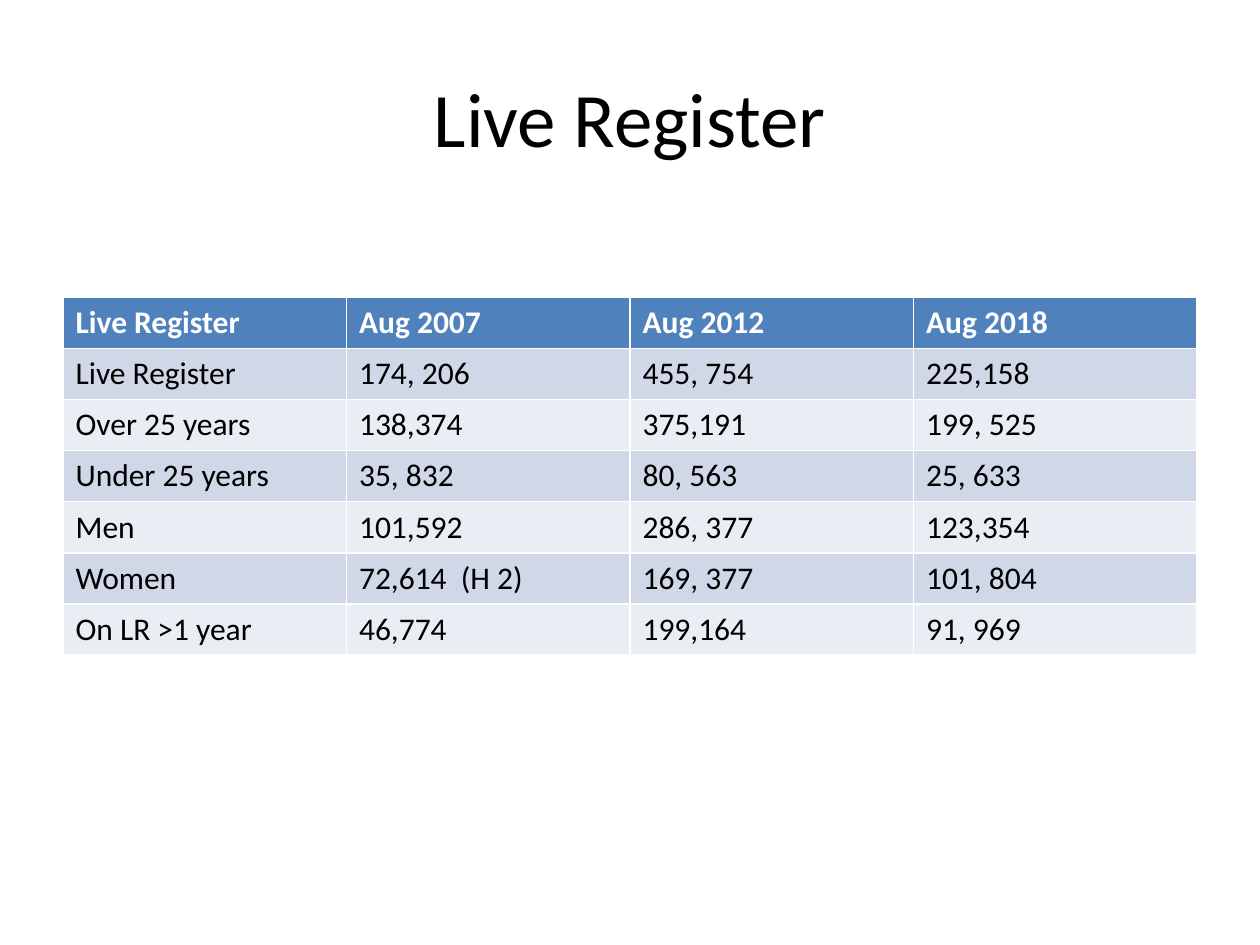
from pptx import Presentation
from pptx.dml.color import RGBColor
from pptx.enum import text
from pptx.util import Inches, Pt

FONT = "Calibri"
BLACK = RGBColor(0x00, 0x00, 0x00)
WHITE = RGBColor(0xFF, 0xFF, 0xFF)
HEADER_BLUE = RGBColor(0x4F, 0x81, 0xBD)
BAND_DARK = RGBColor(0xD0, 0xD8, 0xE8)
BAND_LIGHT = RGBColor(0xE9, 0xED, 0xF4)

ROWS = [
    ("Live Register", "Aug 2007", "Aug 2012", "Aug 2018"),
    ("Live Register", "174, 206", "455, 754", "225,158"),
    ("Over 25 years", "138,374", "375,191", "199, 525"),
    ("Under 25 years", "35, 832", "80, 563", "25, 633"),
    ("Men", "101,592", "286, 377", "123,354"),
    ("Women", "72,614  (H 2)", "169, 377", "101, 804"),
    ("On LR >1 year", "46,774", "199,164", "91, 969"),
]


def style_font(paragraph, size, color, bold=False):
    for run in paragraph.runs:
        run.font.name = FONT
        run.font.size = Pt(size)
        run.font.color.rgb = color
        run.font.bold = bold


presentation = Presentation()
presentation.slide_width = Inches(10)
presentation.slide_height = Inches(7.5)
slide = presentation.slides.add_slide(presentation.slide_layouts[5])

title = slide.shapes.title
title.left, title.top = Inches(0.5), Inches(0.3)
title.width, title.height = Inches(9), Inches(1.25)
title.text_frame.text = "Live Register"
title.text_frame.vertical_anchor = text.MSO_ANCHOR.MIDDLE
title_paragraph = title.text_frame.paragraphs[0]
title_paragraph.alignment = text.PP_ALIGN.CENTER
style_font(title_paragraph, 44, BLACK)

# The default table style supplies the white rules between cells.
table = slide.shapes.add_table(
    len(ROWS), len(ROWS[0]), Inches(0.5), Inches(2.36), Inches(9), Inches(2.84)
).table

for row_index, values in enumerate(ROWS):
    is_header = row_index == 0
    if is_header:
        fill_color = HEADER_BLUE
    else:
        fill_color = BAND_DARK if row_index % 2 else BAND_LIGHT
    for column_index, value in enumerate(values):
        cell = table.cell(row_index, column_index)
        cell.fill.solid()
        cell.fill.fore_color.rgb = fill_color
        cell.text_frame.text = value
        style_font(cell.text_frame.paragraphs[0], 18,
                   WHITE if is_header else BLACK, is_header)

presentation.save("out.pptx")
